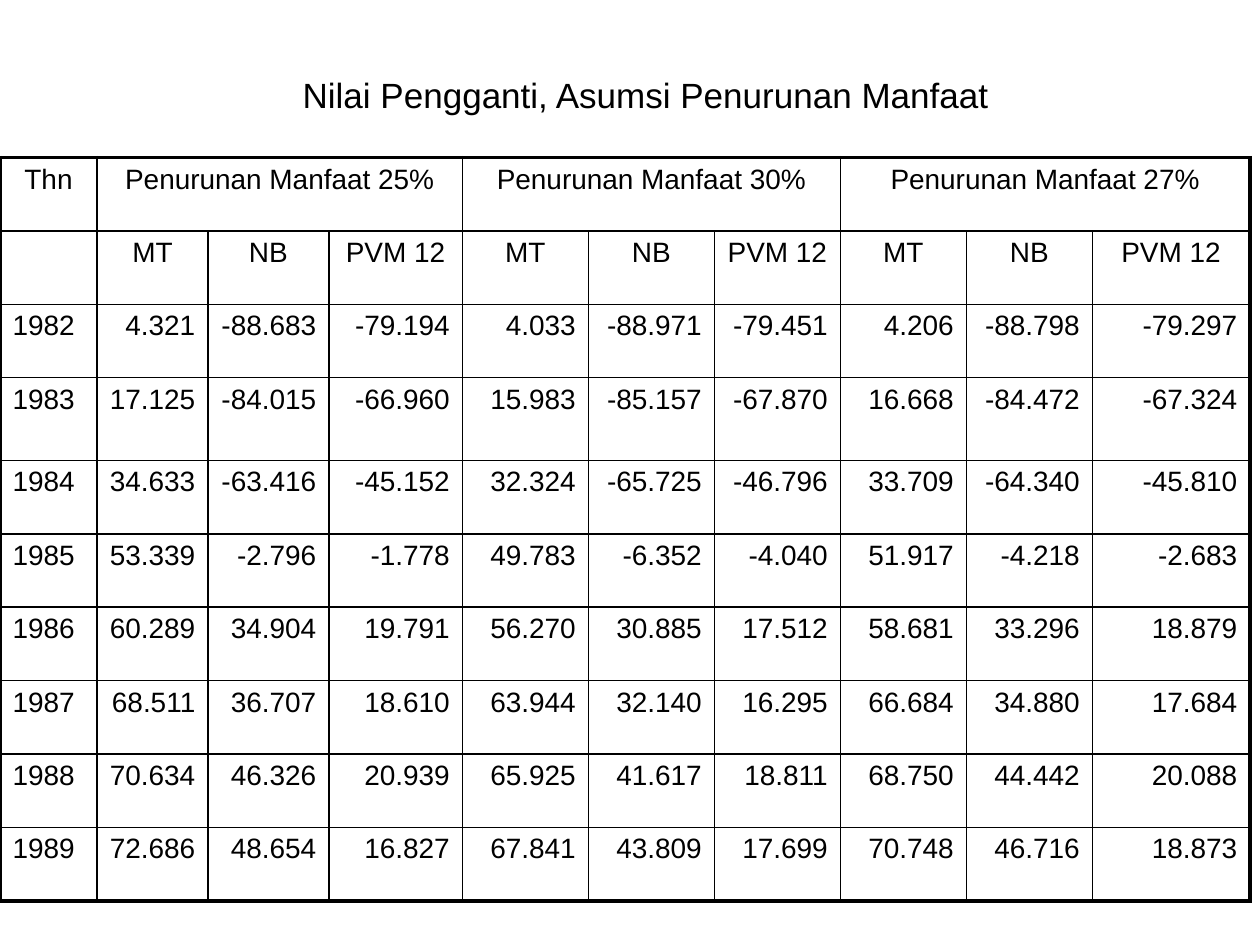
from typing import NamedTuple

from pptx import Presentation
from pptx.dml.color import RGBColor
from pptx.enum.text import MSO_ANCHOR, PP_ALIGN
from pptx.oxml.ns import qn
from pptx.util import Inches, Pt
from lxml import etree

LEFT, CENTER, RIGHT = PP_ALIGN.LEFT, PP_ALIGN.CENTER, PP_ALIGN.RIGHT
MIDDLE = MSO_ANCHOR.MIDDLE
FONT = "Arial"
BLACK = "000000"
INNER_LINE, OUTER_LINE = 1, 2.25

TABLE_TOP, TABLE_HEIGHT = 1.25, 5.9
COLUMN_WIDTHS = [0.77, 0.88, 0.96, 1.06, 1, 1, 1, 1, 1, 1.25]
ROW_SHARES = [8, 8, 8, 9, 8, 8, 8, 8, 8, 8]
GROUP_SIZE = 3
GROUPS = ["Penurunan Manfaat 25%", "Penurunan Manfaat 30%", "Penurunan Manfaat 27%"]
MEASURES = ["MT", "NB", "PVM 12"]


class Year(NamedTuple):
    label: str
    values: str


YEARS = [
    Year("1982", "4.321 -88.683 -79.194 4.033 -88.971 -79.451 4.206 -88.798 -79.297"),
    Year("1983", "17.125 -84.015 -66.960 15.983 -85.157 -67.870 16.668 -84.472 -67.324"),
    Year("1984", "34.633 -63.416 -45.152 32.324 -65.725 -46.796 33.709 -64.340 -45.810"),
    Year("1985", "53.339 -2.796 -1.778 49.783 -6.352 -4.040 51.917 -4.218 -2.683"),
    Year("1986", "60.289 34.904 19.791 56.270 30.885 17.512 58.681 33.296 18.879"),
    Year("1987", "68.511 36.707 18.610 63.944 32.140 16.295 66.684 34.880 17.684"),
    Year("1988", "70.634 46.326 20.939 65.925 41.617 18.811 68.750 44.442 20.088"),
    Year("1989", "72.686 48.654 16.827 67.841 43.809 17.699 70.748 46.716 18.873"),
]


def color(hex_value: str) -> RGBColor:
    return RGBColor.from_string(hex_value)


def write(frame, text: str, size: float, align) -> None:
    frame.text = text
    para = frame.paragraphs[0]
    para.alignment = align
    for span in para.runs:
        span.font.name = FONT
        span.font.size = Pt(size)
        span.font.color.rgb = color(BLACK)


def add_border(cell, side: str, width: float) -> None:
    properties = cell._tc.get_or_add_tcPr()
    line = etree.SubElement(properties, qn(f"a:ln{side}"), w=str(Pt(width)))
    fill = etree.SubElement(line, qn("a:solidFill"))
    etree.SubElement(fill, qn("a:srgbClr"), val=BLACK)


def frame_cell(cell, row: int, column: int) -> None:
    """Draw heavy lines on the table's outline and thin lines inside it."""
    last_column = column + (cell.span_width if cell.is_merge_origin else 1)
    outer_sides = {
        "L": column == 0,
        "R": last_column == len(COLUMN_WIDTHS),
        "T": row == 0,
        "B": row == len(ROW_SHARES) - 1,
    }
    for side, is_outer in outer_sides.items():
        add_border(cell, side, OUTER_LINE if is_outer else INNER_LINE)
    cell.fill.background()


def table_rows() -> list[list[str]]:
    group_row = ["Thn"]
    for group in GROUPS:
        group_row += [group] + [""] * (GROUP_SIZE - 1)
    measure_row = [""] + MEASURES * len(GROUPS)
    return [group_row, measure_row] + [[year.label, *year.values.split()] for year in YEARS]


def add_benefit_table(page) -> None:
    rows = table_rows()
    table = page.shapes.add_table(
        len(rows), len(COLUMN_WIDTHS), 0, Inches(TABLE_TOP),
        Inches(sum(COLUMN_WIDTHS)), Inches(TABLE_HEIGHT),
    ).table
    table.first_row = table.horz_banding = False
    for column, width in zip(table.columns, COLUMN_WIDTHS):
        column.width = Inches(width)
    for row, share in zip(table.rows, ROW_SHARES):
        row.height = Inches(TABLE_HEIGHT * share / sum(ROW_SHARES))
    for start in range(1, len(COLUMN_WIDTHS), GROUP_SIZE):
        table.cell(0, start).merge(table.cell(0, start + GROUP_SIZE - 1))

    for row, texts in enumerate(rows):
        for column, text in enumerate(texts):
            cell = table.cell(row, column)
            if row < 2:
                align = CENTER
            else:
                align = LEFT if column == 0 else RIGHT
            write(cell.text_frame, text, 16, align)
            frame_cell(cell, row, column)


def add_title(page) -> None:
    title = page.shapes.title
    title.left, title.top = Inches(0.25), Inches(0.33)
    title.width, title.height = Inches(9.75), Inches(0.84)
    title.text_frame.vertical_anchor = MIDDLE
    write(title.text_frame, "Nilai Pengganti, Asumsi Penurunan Manfaat", 20, CENTER)


def main() -> None:
    deck = Presentation()
    deck.slide_width, deck.slide_height = Inches(10), Inches(7.5)
    page = deck.slides.add_slide(deck.slide_layouts[5])
    add_title(page)
    add_benefit_table(page)
    deck.save("out.pptx")


if __name__ == "__main__":
    main()
